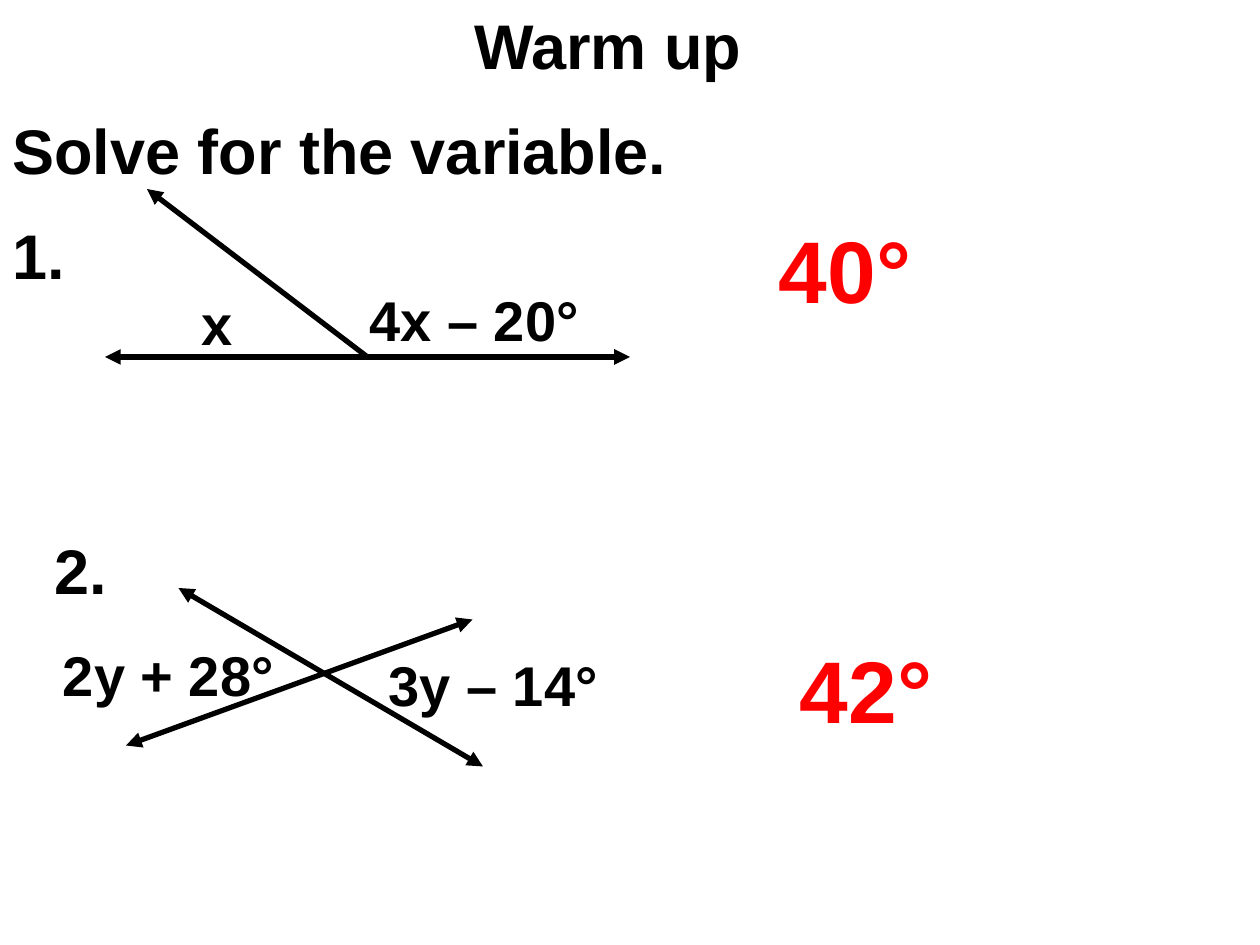
import dataclasses

import lxml.etree
import pptx
import pptx.dml.color
import pptx.enum.shapes
import pptx.enum.text
import pptx.oxml.ns
import pptx.util


@dataclasses.dataclass(frozen=True)
class Theme:
    font: str = "Arial"
    ink: str = "000000"
    answer_ink: str = "FF0000"
    heading: int = 36
    label: int = 32
    answer: int = 50
    stroke: int = 3


THEME = Theme()
WIDTH, HEIGHT = pptx.util.Inches(10), pptx.util.Inches(7.5)
COLUMNS, ROWS = 120, 90


def grid_x(column):
    return round(WIDTH * column / COLUMNS)


def grid_y(row):
    return round(HEIGHT * row / ROWS)


def add_text(s, box, text, size, color=THEME.ink, tight=False):
    left, top, width, height = box
    sp = s.shapes.add_textbox(grid_x(left), grid_y(top), grid_x(width), grid_y(height))
    tf = sp.text_frame
    tf.word_wrap = not tight
    tf.auto_size = pptx.enum.text.MSO_AUTO_SIZE.SHAPE_TO_FIT_TEXT
    if tight:
        tf.margin_left = tf.margin_top = tf.margin_right = tf.margin_bottom = 0
    r = tf.paragraphs[0].add_run()
    r.text = text
    r.font.name = THEME.font
    r.font.size = pptx.util.Pt(size)
    r.font.bold = True
    r.font.color.rgb = pptx.dml.color.RGBColor.from_string(color)


def add_arrow(s, start, end, ends):
    line = s.shapes.add_connector(
        pptx.enum.shapes.MSO_CONNECTOR.STRAIGHT,
        grid_x(start[0]), grid_y(start[1]), grid_x(end[0]), grid_y(end[1]))
    line.line.color.rgb = pptx.dml.color.RGBColor.from_string(THEME.ink)
    line.line.width = pptx.util.Pt(THEME.stroke)
    ln = line.line._get_or_add_ln()
    for tag in ends:
        lxml.etree.SubElement(ln, pptx.oxml.ns.qn(tag), type="triangle")
    lxml.etree.SubElement(line._element.spPr, pptx.oxml.ns.qn("a:effectLst"))


def add_header(s, left, top):
    add_text(s, (left, top + 10, 71, 8.5), "Solve for the variable.", THEME.heading)
    add_text(s, (left + 44, top, 39, 8.4), "Warm up", THEME.heading)


def add_problem(s, left, top, number, answer, labels, arrows, tight=False):
    for start, end, ends in arrows:
        add_arrow(s, (left + start[0], top + start[1]),
                  (left + end[0], top + end[1]), ends)
    for text, (x, y, width, height) in labels:
        add_text(s, (left + x, top + y, width, height), text, THEME.label, tight=tight)
    text, row = number
    add_text(s, (left, top + row, 13, 8.4), text, THEME.heading)
    text, column, row = answer
    add_text(s, (left + column, top + row, 30, 11.2), text,
             THEME.answer, THEME.answer_ink)


def main():
    prs = pptx.Presentation()
    prs.slide_width, prs.slide_height = WIDTH, HEIGHT
    s = prs.slides.add_slide(prs.slide_layouts[6])
    ray = ("a:tailEnd",)
    both = ("a:headEnd", "a:tailEnd")
    add_header(s, 0, 0)
    add_problem(
        s, 0, 18, ("1.", 2), ("40°", 73, 2),
        [("x", (18, 9, 15, 7.6)), ("4x – 20°", (34, 8.6, 28, 7.6))],
        [((10, 16), (60, 16), both), ((35, 16), (14, 0), ray)])
    add_problem(
        s, 4, 50, ("2.", 0), ("42°", 71, 10),
        [("2y + 28°", (2, 11, 20.2, 6.5)), ("3y – 14°", (33, 12, 20, 6.5))],
        [((41, 9), (8, 21), both), ((42, 23), (13, 6), both)], tight=True)
    prs.save("out.pptx")


if __name__ == "__main__":
    main()
